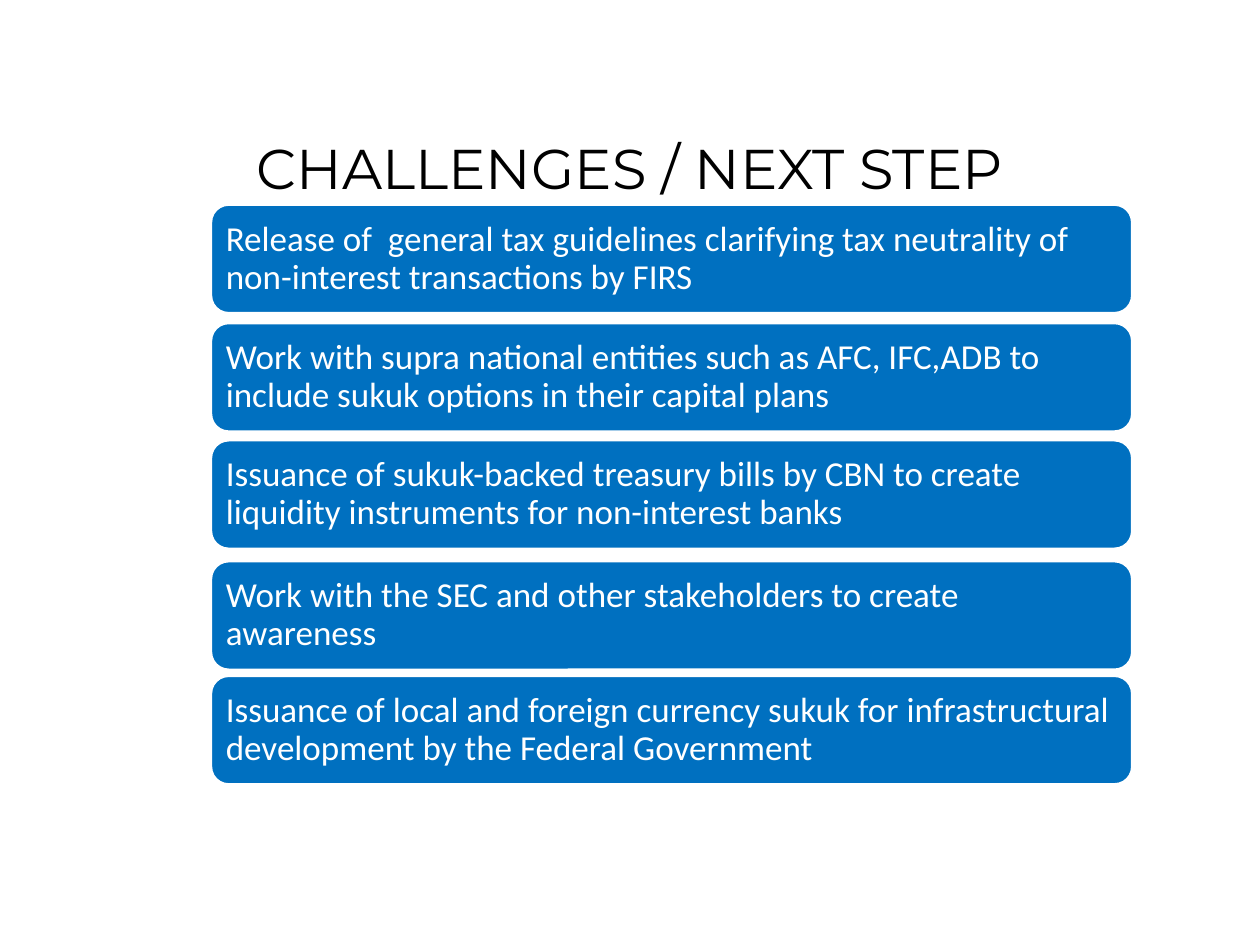
from pptx import Presentation
from pptx import util as u
from pptx.dml.color import RGBColor
from pptx.enum import shapes, text

SCALE = 9144
COLOURS = {"bar": "0070C0", "edge": "FFFFFF", "title": "000000", "label": "FFFFFF"}
TITLE = "CHALLENGES / NEXT STEP"
STEPS = [
    (0, "Release of  general tax guidelines clarifying tax neutrality of non-interest transactions by FIRS"),
    (94, "Work with supra national entities such as AFC, IFC,ADB to include sukuk options in their capital plans"),
    (187, "Issuance of sukuk-backed treasury bills by CBN to create liquidity instruments for non-interest banks"),
    (283, "Work with the SEC and other stakeholders to create awareness"),
    (374, "Issuance of local and foreign currency sukuk for infrastructural development by the Federal Government"),
]
BAR_HEIGHT = 87


def px(length):
    """Turn a length in px into EMU."""
    return u.Emu(length * SCALE)


def colour(name):
    """Look up a named colour."""
    return RGBColor.from_string(COLOURS[name])


def apply(target, values):
    """Set each attribute of the target from a dict."""
    for name, value in values.items():
        setattr(target, name, value)


def write(frame, words, ink, margin, font, para_format):
    """Fill a text frame with one formatted paragraph."""
    sides = ("left", "top", "right", "bottom")
    apply(frame, {f"margin_{side}": px(margin) for side in sides})
    apply(frame, {"word_wrap": True, "vertical_anchor": text.MSO_ANCHOR.MIDDLE})
    para = frame.paragraphs[0]
    apply(para, para_format)
    span = para.add_run()
    span.text = words
    apply(span.font, font)
    span.font.color.rgb = colour(ink)


def add_title(page, left, top, width, height):
    """Place the centred heading in its box."""
    box = page.shapes.add_textbox(*map(px, (left, top, width, height)))
    write(box.text_frame, TITLE, "title", 5,
          {"name": "Montserrat", "size": u.Pt(32)},
          {"alignment": text.PP_ALIGN.CENTER})


def add_steps(page, left, top, width):
    """Stack the rounded step bars down from the top of their box."""
    for offset, words in STEPS:
        bar = page.shapes.add_shape(
            shapes.MSO_SHAPE.ROUNDED_RECTANGLE,
            *map(px, (left, top + offset, width, BAR_HEIGHT)))
        bar.shadow.inherit = False
        bar.fill.solid()
        bar.fill.fore_color.rgb = colour("bar")
        bar.line.color.rgb = colour("edge")
        bar.line.width = u.Pt(2)
        write(bar.text_frame, words, "label", 8,
              {"name": "Calibri", "size": u.Pt(20)},
              {"alignment": text.PP_ALIGN.LEFT, "line_spacing": 0.9})


def main():
    """Build and save the deck."""
    deck = Presentation()
    apply(deck, {"slide_width": px(1000), "slide_height": px(750)})
    page = deck.slides.add_slide(deck.slide_layouts[6])
    add_title(page, 50, 97, 900, 72)
    add_steps(page, 167, 162, 732)
    deck.save("out.pptx")


if __name__ == "__main__":
    main()
